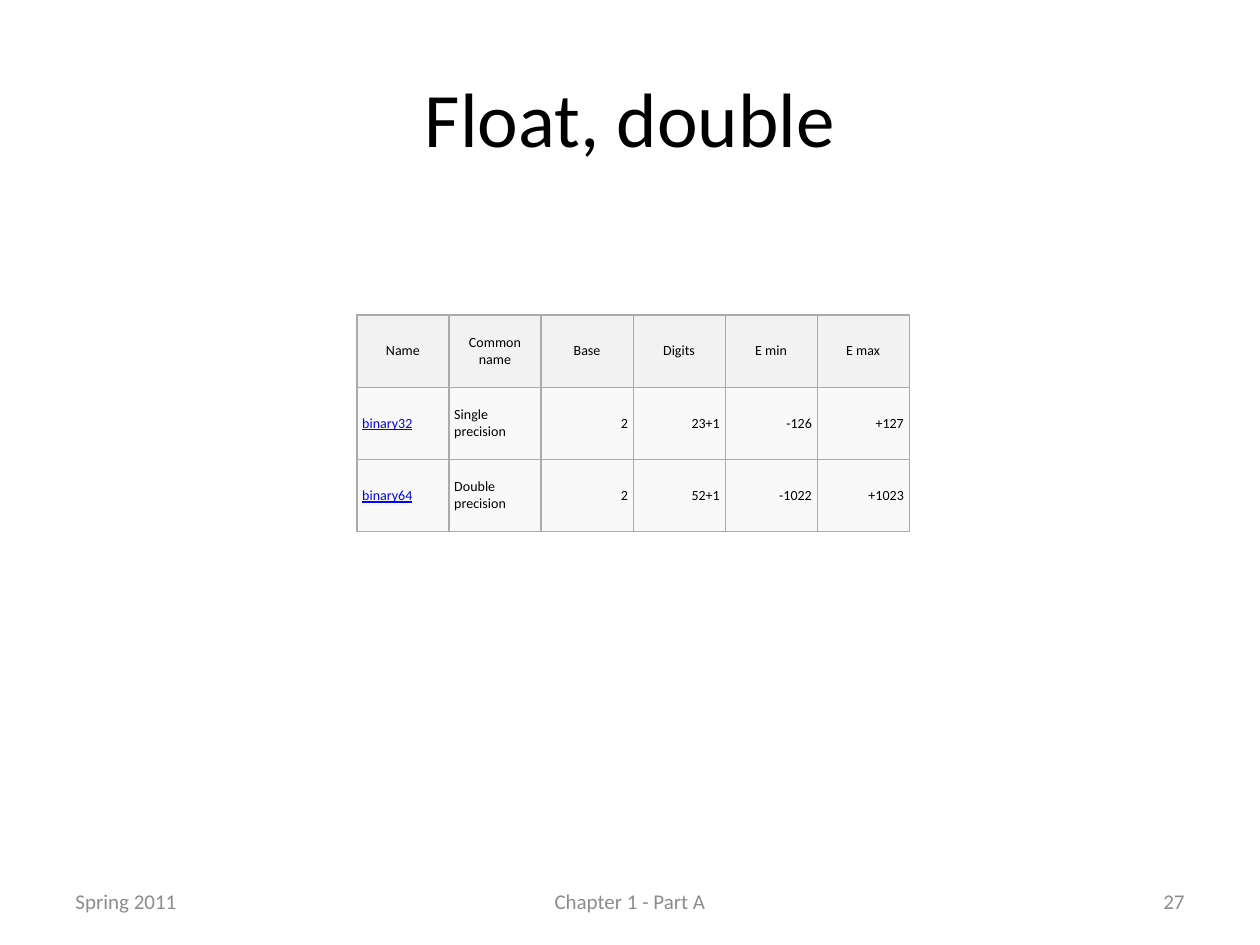
from lxml.etree import SubElement
from pptx import Presentation
from pptx.dml.color import RGBColor
from pptx.enum.text import MSO_ANCHOR, PP_ALIGN
from pptx.oxml.ns import qn
from pptx.util import Pt

LEFT, CENTER, RIGHT = PP_ALIGN.LEFT, PP_ALIGN.CENTER, PP_ALIGN.RIGHT


def color(hex_string):
    return RGBColor.from_string(hex_string)


def write(text_frame, text, size, hex_color, alignment, underline=False):
    text_frame.word_wrap = True
    paragraph = text_frame.paragraphs[0]
    paragraph.alignment = alignment
    run = paragraph.add_run()
    run.text = text
    run.font.color.rgb = color(hex_color)
    font_values = {"name": "Calibri", "size": Pt(size), "bold": False, "underline": underline}
    for name, value in font_values.items():
        setattr(run.font, name, value)


presentation = Presentation()
presentation.slide_width, presentation.slide_height = Pt(720), Pt(540)
slide = presentation.slides.add_slide(presentation.slide_layouts[6])

# Title and footer: left, top, width, height, text, size, color, alignment
text_boxes = [
    (36, 21.6, 648, 90, "Float, double", 44, "000000", CENTER),
    (36, 500.5, 168, 28.75, "Spring 2011", 12, "8C8C8C", LEFT),
    (516, 500.5, 168, 28.75, "27", 12, "8C8C8C", RIGHT),
    (246, 500.5, 228, 28.75, "Chapter 1 - Part A", 12, "8C8C8C", CENTER),
]
for left, top, width, height, text, size, hex_color, alignment in text_boxes:
    box = slide.shapes.add_textbox(Pt(left), Pt(top), Pt(width), Pt(height))
    box.text_frame.vertical_anchor = MSO_ANCHOR.MIDDLE
    write(box.text_frame, text, size, hex_color, alignment)

# Table of floating-point formats
rows = [
    ["Name", "Common name", "Base", "Digits", "E min", "E max"],
    ["binary32", "Single precision", "2", "23+1", "-126", "+127"],
    ["binary64", "Double precision", "2", "52+1", "-1022", "+1023"],
]
column_width, row_height = 52.6, 41.25
table = slide.shapes.add_table(
    len(rows), len(rows[0]), Pt(204), Pt(180),
    Pt(column_width * len(rows[0])), Pt(row_height * len(rows)),
).table
table.first_row = table.horz_banding = False
for column in table.columns:
    column.width = Pt(column_width)
for row in table.rows:
    row.height = Pt(row_height)

cell_format = {
    "vertical_anchor": MSO_ANCHOR.MIDDLE,
    "margin_left": Pt(3), "margin_right": Pt(3),
    "margin_top": Pt(1.5), "margin_bottom": Pt(1.5),
}
for row_index, row_texts in enumerate(rows):
    is_header = row_index == 0
    for column_index, text in enumerate(row_texts):
        cell = table.cell(row_index, column_index)
        for name, value in cell_format.items():
            setattr(cell, name, value)
        is_link = not is_header and column_index == 0
        alignment = CENTER if is_header else LEFT if column_index < 2 else RIGHT
        write(cell.text_frame, text, 8, "0000FF" if is_link else "000000", alignment, is_link)

        # Borders have to precede the fill in the cell properties
        properties = cell._tc.get_or_add_tcPr()
        for side in ("lnL", "lnR", "lnT", "lnB"):
            border = SubElement(properties, qn(f"a:{side}"), w=str(Pt(0.75)))
            border_fill = SubElement(border, qn("a:solidFill"))
            SubElement(border_fill, qn("a:srgbClr"), val="AAAAAA")
        cell.fill.solid()
        cell.fill.fore_color.rgb = color("F2F2F2" if is_header else "F9F9F9")

presentation.save("out.pptx")
